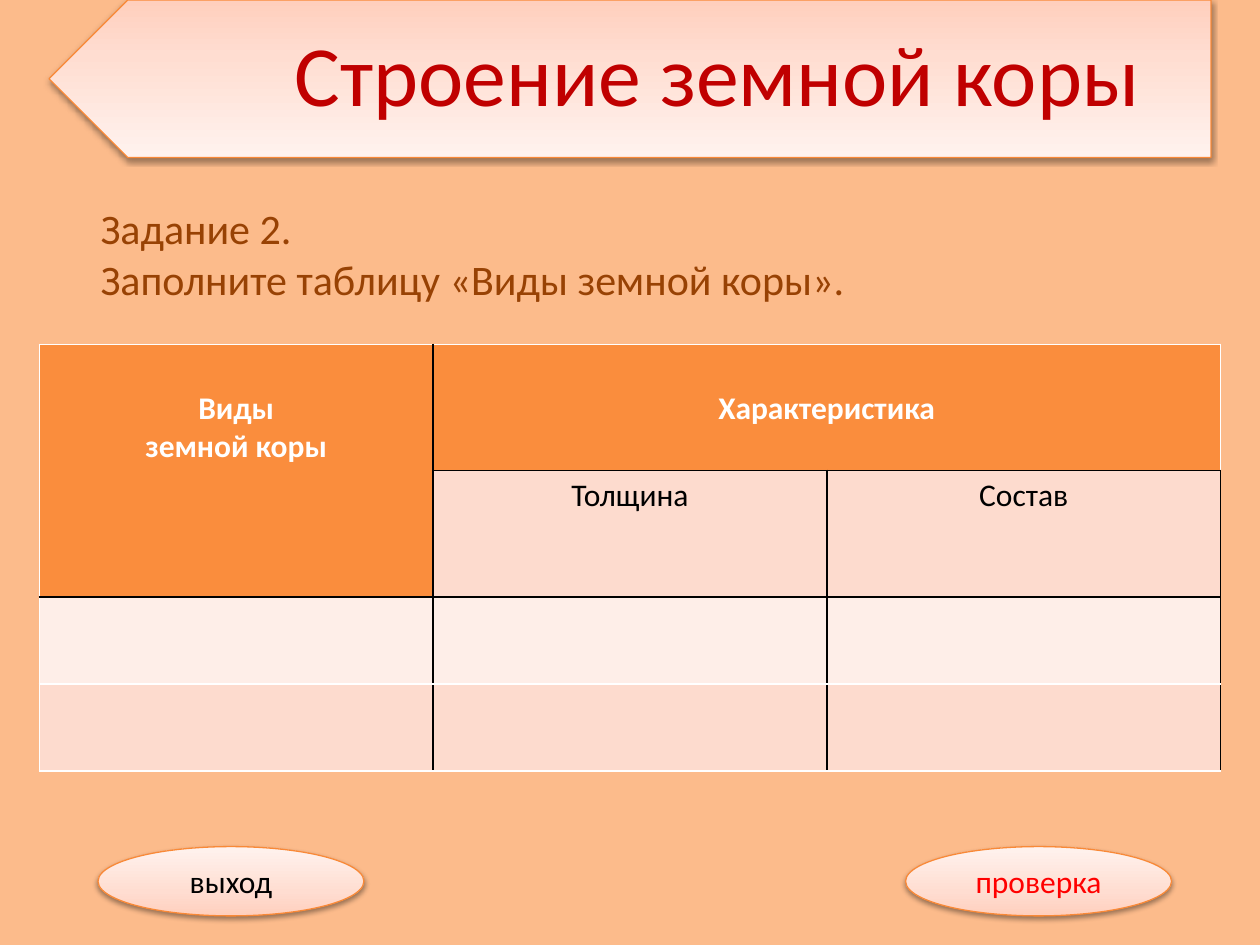
"""Build the slide with the task table on the kinds of the Earth's crust."""
from lxml import etree
from pptx import Presentation
from pptx import util as u
from pptx.dml.color import RGBColor
from pptx.enum import shapes, text
from pptx.oxml.ns import nsdecls, qn

Pt = u.Pt
FONT = "Calibri"
COLORS = {
    "background": "FCBB8B", "title": "C00000", "task": "984204",
    "outline": "F98937", "header": "FA8D3D", "band": "FDDBCE",
    "light": "FEEEE8", "white": "FFFFFF", "black": "000000", "red": "FF0000",
}
GLOW = [(0, "FFCFBD"), (35, "FFDDD1"), (100, "FFF2EE")]


def style(paragraph, size, color, bold=False, align=text.PP_ALIGN.CENTER):
    """Format one paragraph."""
    paragraph.alignment = align
    font = paragraph.font
    font.name, font.size, font.bold = FONT, Pt(size), bold
    font.color.rgb = RGBColor.from_string(COLORS[color])


def add_glossy(kind, left, top, width, height):
    """Add a shape with the gradient, outline and soft shadow of the slide."""
    shape = slide.shapes.add_shape(kind, Pt(left), Pt(top), Pt(width), Pt(height))
    stops = "".join(f'<a:gs pos="{pos * 1000}"><a:srgbClr val="{color}"/></a:gs>'
                    for pos, color in GLOW)
    properties = shape.element.spPr
    properties.append(etree.fromstring(
        f'<a:gradFill {nsdecls("a")} rotWithShape="1"><a:gsLst>{stops}</a:gsLst>'
        '<a:lin ang="16200000" scaled="0"/></a:gradFill>'))
    shape.line.color.rgb = RGBColor.from_string(COLORS["outline"])
    shape.line.width = Pt(0.75)
    properties.append(etree.fromstring(
        f'<a:effectLst {nsdecls("a")}><a:outerShdw blurRad="{Pt(3.1)}" '
        f'dist="{Pt(1.6)}" dir="5400000" rotWithShape="0"><a:srgbClr val="000000">'
        '<a:alpha val="38000"/></a:srgbClr></a:outerShdw></a:effectLst>'))
    return shape


prs = Presentation()
prs.slide_width, prs.slide_height = Pt(720), Pt(540)
slide = prs.slides.add_slide(prs.slide_layouts[5])
slide.background.fill.solid()
slide.background.fill.fore_color.rgb = RGBColor.from_string(COLORS["background"])

banner = add_glossy(shapes.MSO_SHAPE.PENTAGON, 28, 0, 664, 90)
banner.rotation = 180

title = slide.shapes.title
title.element.addprevious(banner.element)
title.left, title.top, title.width, title.height = Pt(28), Pt(0), Pt(664), Pt(90)
heading = title.text_frame
heading.text = "Строение земной коры"
heading.auto_size = text.MSO_AUTO_SIZE.NONE
heading.vertical_anchor = text.MSO_ANCHOR.MIDDLE
heading.margin_left, heading.margin_right = Pt(40), Pt(41)
heading.margin_top = heading.margin_bottom = Pt(14.4)
style(heading.paragraphs[0], 49, "title", align=text.PP_ALIGN.RIGHT)
heading.paragraphs[0].line_spacing = 0.9

task = slide.shapes.add_textbox(Pt(50.4), Pt(112.3), Pt(608), Pt(65.5)).text_frame
task.word_wrap = True
task.text = "Задание 2.\nЗаполните таблицу «Виды земной коры»."
for line in task.paragraphs:
    style(line, 24, "task", align=text.PP_ALIGN.LEFT)

row_heights = [72, 72, 49.7, 49.7]
crust = slide.shapes.add_table(4, 3, Pt(22.5), Pt(196.8), Pt(675),
                               Pt(sum(row_heights))).table
crust.first_row = crust.horz_banding = False
for row, height in zip(crust.rows, row_heights):
    row.height = Pt(height)
for column in crust.columns:
    column.width = Pt(225)

labels = {(0, 0): "Виды\nземной коры", (0, 1): "Характеристика",
          (1, 1): "Толщина", (1, 2): "Состав"}
row_fills = ["header", "band", "light", "band"]
row_edges = ["white", "black", "black", "white", "white"]
header_edges = ["white", "black", "white", "white"]
body_edges = ["white", "black", "black", "black"]
for r in range(4):
    column_edges = header_edges if r == 0 else body_edges
    for c in range(3):
        cell = crust.cell(r, c)
        is_header = r == 0 or (r, c) == (1, 0)
        borders = {"a:lnL": column_edges[c], "a:lnR": column_edges[c + 1],
                   "a:lnT": row_edges[r], "a:lnB": row_edges[r + 1]}
        cell_properties = cell._tc.get_or_add_tcPr()
        for side, color in borders.items():
            edge = etree.SubElement(cell_properties, qn(side), w=str(Pt(1)))
            edge_fill = etree.SubElement(edge, qn("a:solidFill"))
            etree.SubElement(edge_fill, qn("a:srgbClr"), val=COLORS[color])
        cell.fill.solid()
        cell.fill.fore_color.rgb = RGBColor.from_string(
            COLORS["header" if is_header else row_fills[r]])
        if (r, c) in labels:
            cell.text = labels[r, c]
            if is_header:
                cell.margin_top = Pt(25.6)
            for line in cell.text_frame.paragraphs:
                style(line, 18, "white" if is_header else "black", is_header)
crust.cell(0, 0).merge(crust.cell(1, 0))
crust.cell(0, 1).merge(crust.cell(0, 2))

for label, left, color in [("выход", 56, "black"), ("проверка", 517.5, "red")]:
    button = add_glossy(shapes.MSO_SHAPE.OVAL, left, 483.8, 152, 39.6)
    button.text_frame.text = label
    button.text_frame.vertical_anchor = text.MSO_ANCHOR.MIDDLE
    style(button.text_frame.paragraphs[0], 18, color)

prs.save("out.pptx")
